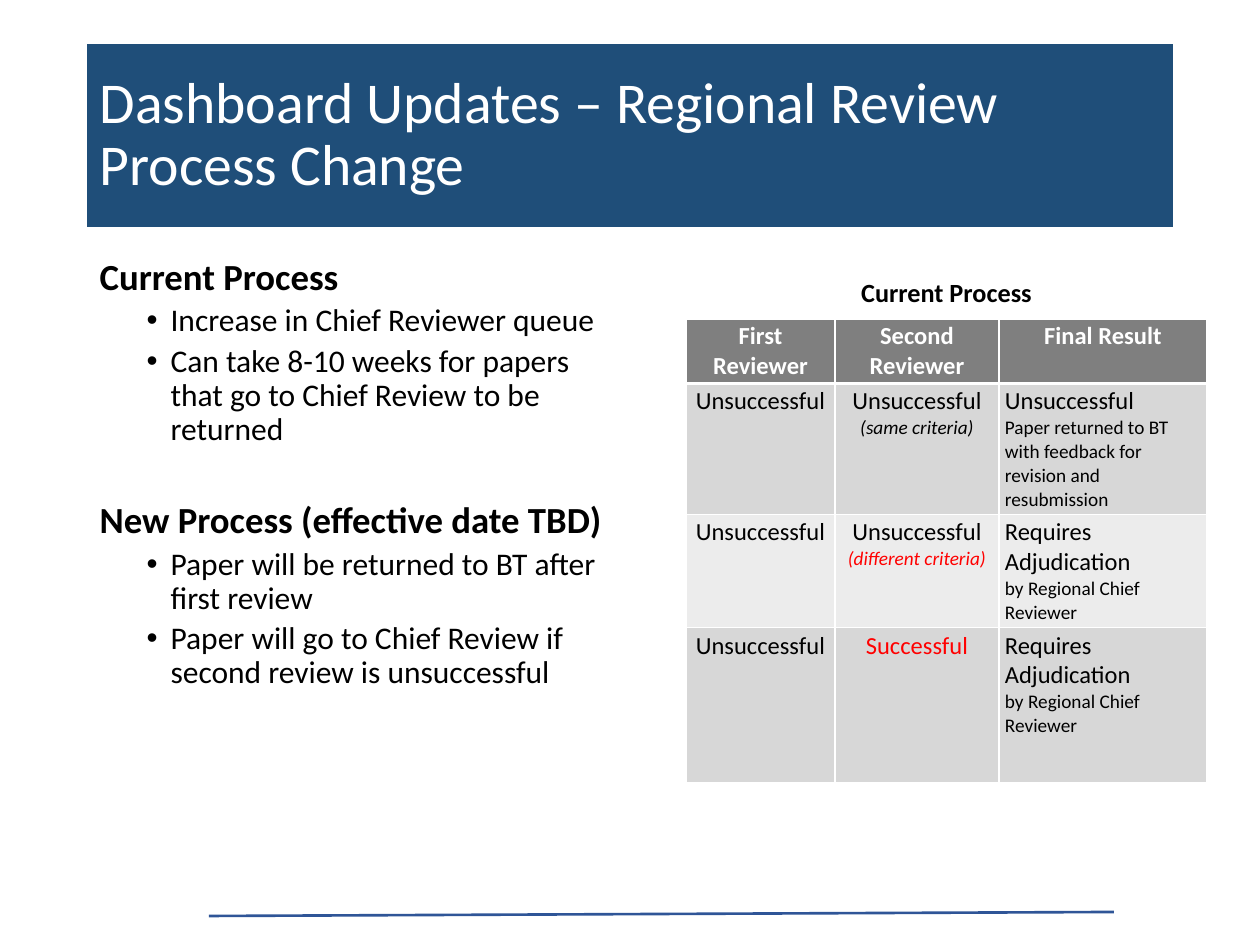
from lxml.etree import SubElement as Sub
from pptx import Presentation
from pptx.dml.color import RGBColor as Rgb
from pptx.enum.shapes import MSO_CONNECTOR as Link
from pptx.enum.text import MSO_ANCHOR as Anchor, MSO_AUTO_SIZE as Auto, PP_ALIGN as Align
from pptx.oxml.ns import qn
from pptx.util import Pt

SCALE = 914400 / 126
FACE = "Calibri"
HUES = {
    "white": "FFFFFF", "black": "000000", "red": "FF0000", "navy": "1F4E79",
    "blue": "2F5597", "head": "7F7F7F", "dark": "D7D7D7", "light": "ECECEC",
}
TITLE = "Dashboard Updates – Regional Review Process Change"
BODY = [
    ("Current Process", 0, [
        "Increase in Chief Reviewer queue",
        "Can take 8-10 weeks for papers that go to Chief Review to be returned",
    ]),
    ("New Process (effective date TBD)", 31, [
        "Paper will be returned to BT after first review",
        "Paper will go to Chief Review if second review is unsuccessful",
    ]),
]
COLS = [149, 164, 208]
ROWS = [43, 63, 131, 113, 155]
HEADS = ["First Reviewer", "Second Reviewer", "Final Result"]
CHIEF = ("Requires Adjudication", "by Regional Chief Reviewer")
CASES = [
    ("dark", ("Unsuccessful", "(same criteria)"), "black", "black",
     ("Unsuccessful", "Paper returned to BT with feedback for revision and resubmission")),
    ("light", ("Unsuccessful", "(different criteria)"), "black", "red", CHIEF),
    ("dark", ("Successful",), "red", "red", CHIEF),
]


def px(num):
    """Turn pixels into EMU."""
    return round(num * SCALE)


def hue(name):
    """Return a named colour."""
    return Rgb.from_string(HUES[name])


def place(shape, *box):
    """Set left, top, width and height in pixels."""
    shape.left, shape.top, shape.width, shape.height = map(px, box)


def style(para, size, tint="black", bold=False, slant=False):
    """Set the font of a paragraph."""
    font = para.font
    font.name, font.size, font.bold, font.italic = FACE, Pt(size), bold, slant
    font.color.rgb = hue(tint)


def add_para(frame, text):
    """Fill the empty first paragraph or append another."""
    para = frame.paragraphs[0]
    if para.runs:
        para = frame.add_paragraph()
    para.text = text
    return para


def add_title(slide):
    """Format the title as a filled band."""
    shape = slide.shapes.title
    place(shape, 87, 44, 1086, 183)
    shape.fill.solid()
    shape.fill.fore_color.rgb = hue("navy")
    frame = shape.text_frame
    frame.auto_size, frame.vertical_anchor = Auto.NONE, Anchor.MIDDLE
    para = add_para(frame, TITLE)
    para.alignment, para.line_spacing = Align.LEFT, 0.9
    style(para, 33, "white")


def add_item(frame, text, size, gap, level=0):
    """Add a heading or a bulleted line to the body."""
    para = add_para(frame, text)
    para.level, para.line_spacing, para.space_before = level, 0.9, Pt(gap)
    props = para._p.get_or_add_pPr()
    props.set("marL", str(px(71 * level)))
    props.set("indent", str(px(-24 * level)))
    if level:
        Sub(props, qn("a:buFont"), typeface="Arial")
        Sub(props, qn("a:buChar"), char="•")
    else:
        Sub(props, qn("a:buNone"))
    style(para, size, bold=not level)


def add_body(slide):
    """Fill the body with headings and bullets."""
    shape = slide.placeholders[1]
    place(shape, 87, 252, 536, 600)
    frame = shape.text_frame
    frame.auto_size = Auto.NONE
    for head, gap, items in BODY:
        add_item(frame, head, 21, gap)
        for item in items:
            add_item(frame, item, 18, 3.8, 1)


def add_edge(cell, side, width):
    """Draw one white cell border."""
    line = Sub(cell._tc.get_or_add_tcPr(), qn(f"a:ln{side}"), w=str(Pt(width)))
    Sub(Sub(line, qn("a:solidFill")), qn("a:srgbClr"), val=HUES["white"])


def set_cell(cell, row, fill):
    """Set margins, borders and fill of a cell."""
    cell.margin_left = cell.margin_right = px(6)
    cell.margin_top = cell.margin_bottom = px(3)
    top = 2.4 if row in (1, 2) else 0.8
    base = 2.4 if row < 2 else 0.8
    for side, width in zip("LRTB", (0.8, 0.8, top, base)):
        add_edge(cell, side, width)
    cell.fill.solid()
    cell.fill.fore_color.rgb = hue(fill)


def write(cell, text, size, align=Align.CENTER, **look):
    """Add a styled paragraph to a cell."""
    para = add_para(cell.text_frame, text)
    para.alignment = align
    style(para, size, **look)


def add_grid(slide):
    """Build the table of review results."""
    box = map(px, (686, 275, sum(COLS), sum(ROWS)))
    grid = slide.shapes.add_table(len(ROWS), len(COLS), *box).table
    for col, width in zip(grid.columns, COLS):
        col.width = px(width)
    fills = ["white", "head"] + [case[0] for case in CASES]
    for row, (high, fill) in enumerate(zip(ROWS, fills)):
        grid.rows[row].height = px(high)
        for cell in grid.rows[row].cells:
            set_cell(cell, row, fill)
    grid.cell(0, 0).merge(grid.cell(0, 2))
    write(grid.cell(0, 0), "Current Process", 15, bold=True)
    for cell, text in zip(grid.rows[1].cells, HEADS):
        write(cell, text, 14, tint="white", bold=True)
    for row, (_, second, tint, note, final) in enumerate(CASES, 2):
        write(grid.cell(row, 0), "Unsuccessful", 14)
        write(grid.cell(row, 1), second[0], 14, tint=tint)
        for text in second[1:]:
            write(grid.cell(row, 1), text, 11, tint=note, slant=True)
        for text, size in zip(final, (14, 11)):
            write(grid.cell(row, 2), text, size, Align.LEFT)


def add_rule(slide):
    """Draw the line at the foot."""
    ends = map(px, (209, 916, 1114, 912))
    rule = slide.shapes.add_connector(Link.STRAIGHT, *ends)
    rule.line.color.rgb, rule.line.width = hue("blue"), Pt(1.5)
    Sub(rule._element.spPr, qn("a:effectLst"))


def main():
    """Build and save the slide."""
    deck = Presentation()
    deck.slide_width, deck.slide_height = px(1260), px(945)
    slide = deck.slides.add_slide(deck.slide_layouts[1])
    add_rule(slide)
    add_title(slide)
    add_body(slide)
    add_grid(slide)
    deck.save("out.pptx")


if __name__ == "__main__":
    main()
